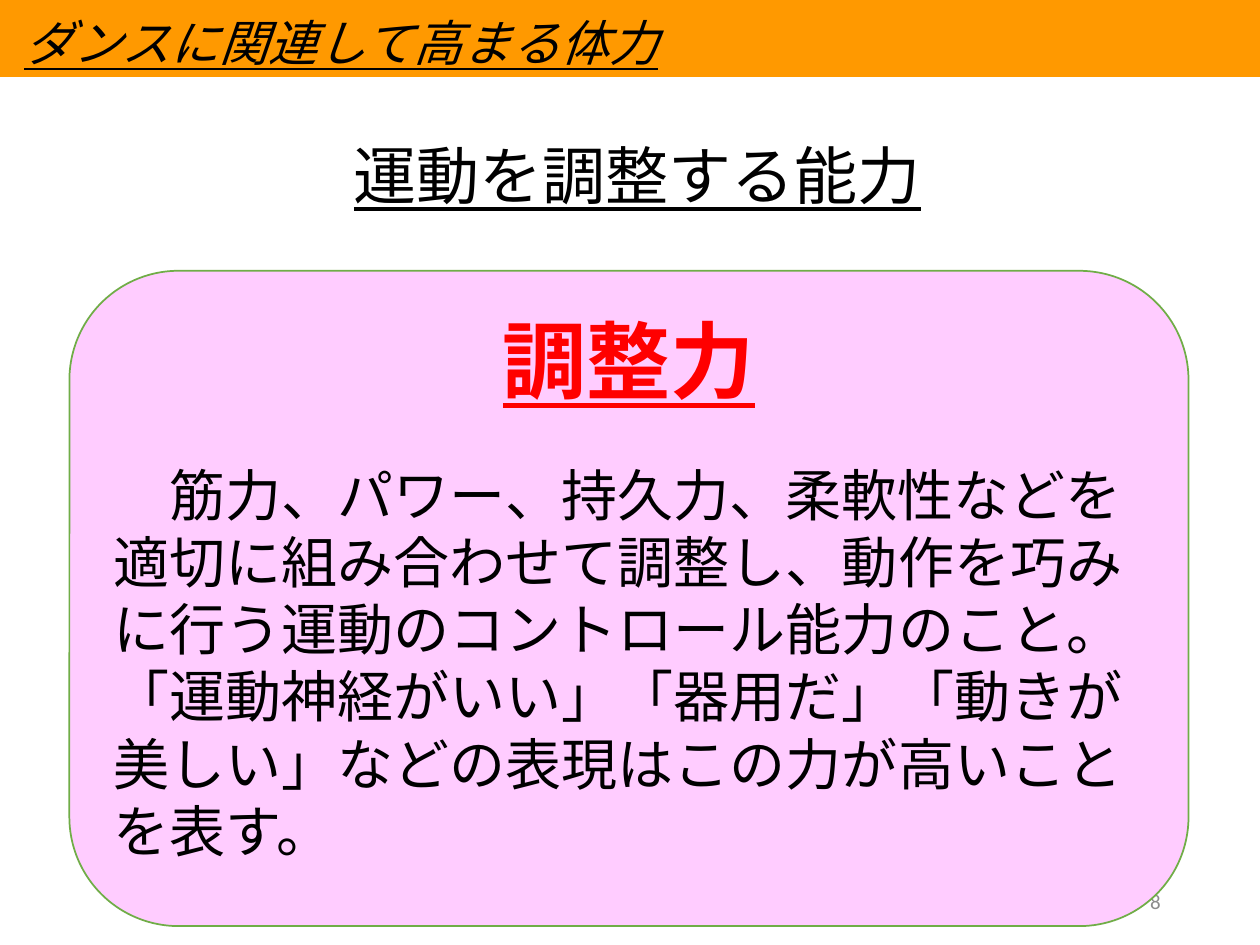
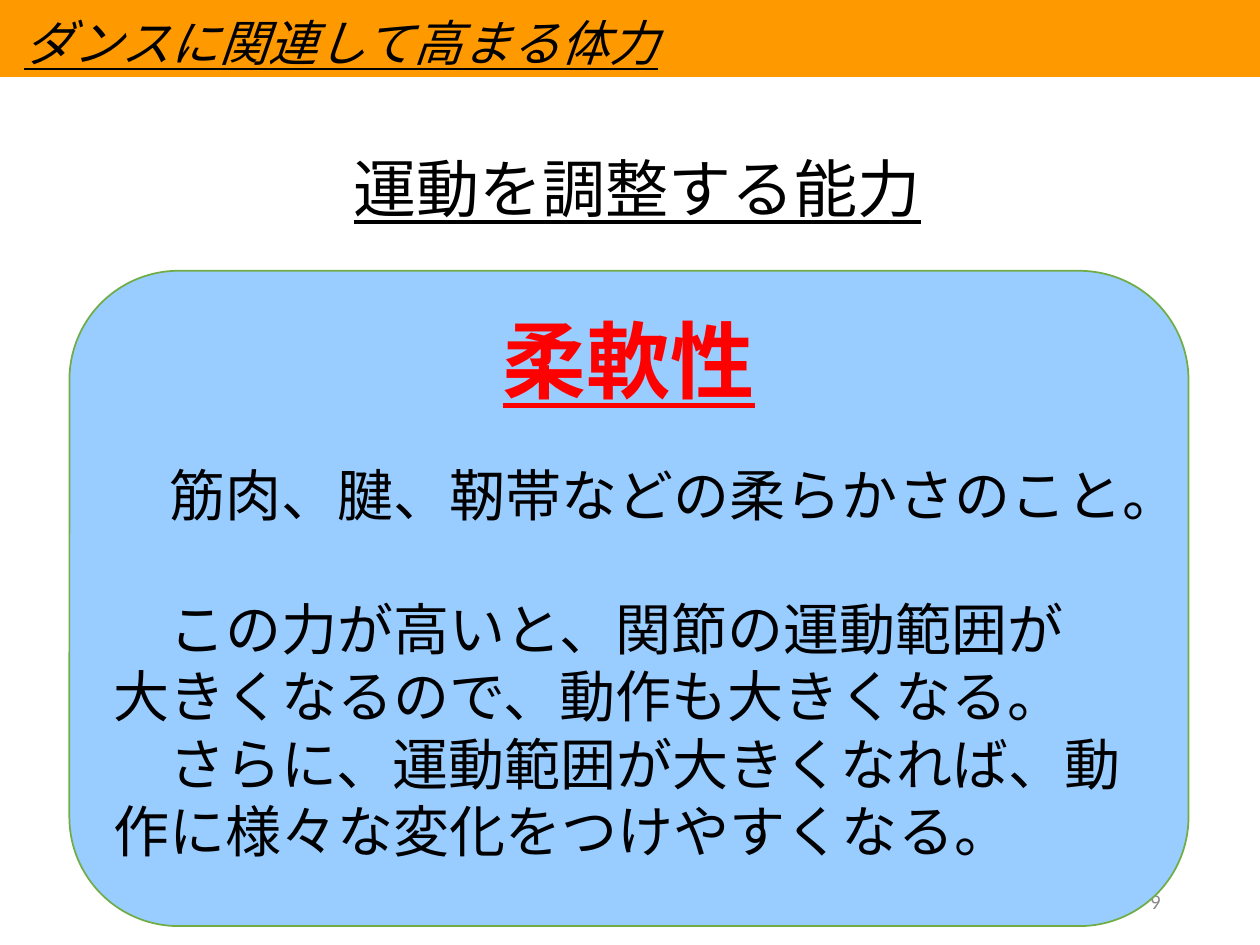
from pptx import Presentation
from pptx.dml.color import RGBColor
from pptx.enum.lang import MSO_LANGUAGE_ID as Lang
from pptx.enum.shapes import MSO_SHAPE as Kind
from pptx.enum.text import MSO_ANCHOR as Anchor, PP_ALIGN as Align
from pptx.util import Cm, Pt

THEME = {
    "band": "FF9900",
    "edge": "70AD47",
    "title": dict(name="Calibri", size=Pt(36), underline=True, color="000000"),
    "header": dict(name="Calibri", size=Pt(28), italic=True, underline=True, color="000000"),
    "term": dict(name="Calibri", size=Pt(48), bold=True, underline=True, color="FF0000"),
    "body": dict(name="Arial", size=Pt(32), color="000000"),
    "number": dict(name="Calibri", size=Pt(12), color="8C8C8C"),
}
HEADER = "ダンスに関連して高まる体力"
TITLE = "運動を調整する能力"
TERM_GAP, LINE_GAP = 28.8, 38.4  # points below the term, and one body line

# Each body line carries the space below it in points
PAGES = [
    dict(number=8, top=2.41, fill="FFCCFF", term="調整力", body=[
        ("　筋力、パワー、持久力、柔軟性などを適切に組み合わせて調整し、動作を巧みに行う"
         "運動のコントロール能力のこと。「運動神経がいい」「器用だ」「動きが美しい」"
         "などの表現はこの力が高いことを表す。", 0),
    ]),
    dict(number=9, top=2.67, fill="99CCFF", term="柔軟性", body=[
        ("　筋肉、腱、靭帯などの柔らかさのこと。", LINE_GAP),
        ("　この力が高いと、関節の運動範囲が", 0),
        ("大きくなるので、動作も大きくなる。", 0),
        ("　さらに、運動範囲が大きくなれば、動", 0),
        ("作に様々な変化をつけやすくなる。", 0),
    ]),
]


def write(par, text, style, align=Align.LEFT, after=0):
    """Fill a paragraph with one run in a theme style."""
    par.alignment, par.space_before, par.space_after = align, Pt(0), Pt(after)
    run = par.add_run()
    run.text = text
    run.font.language_id = Lang.JAPANESE
    for key, value in THEME[style].items():
        if key == "color":
            run.font.color.rgb = RGBColor.from_string(value)
        else:
            setattr(run.font, key, value)


def paint(shape, fill, edge=None):
    """Set a solid fill and an optional thin outline, with no shadow."""
    shape.shadow.inherit = False
    shape.fill.solid()
    shape.fill.fore_color.rgb = RGBColor.from_string(fill)
    if edge:
        shape.line.color.rgb = RGBColor.from_string(edge)
        shape.line.width = Pt(1)
    else:
        shape.line.fill.background()


deck = Presentation()
deck.slide_width, deck.slide_height = Cm(25.4), Cm(19.05)

for page in PAGES:
    slide = deck.slides.add_slide(deck.slide_layouts[5])
    shapes = slide.shapes

    title = shapes.title
    title.left, title.top = Cm(6.88), Cm(page["top"])
    title.width, title.height = Cm(12.58), Cm(2.21)
    title.text_frame.vertical_anchor = Anchor.MIDDLE
    write(title.text_frame.paragraphs[0], TITLE, "title")

    band = shapes.add_shape(Kind.RECTANGLE, Cm(-0.05), Cm(0), Cm(25.45), Cm(1.55))
    paint(band, THEME["band"])

    labels = [
        (str(page["number"]), "number", Align.RIGHT, (17.93, 17.65, 5.72, 1.02)),
        (HEADER, "header", Align.CENTER, (-0.18, 0.15, 14.12, 1.4)),
    ]
    for text, style, align, place in labels:
        frame = shapes.add_textbox(*map(Cm, place)).text_frame
        frame.word_wrap = True
        frame.vertical_anchor = Anchor.MIDDLE
        write(frame.paragraphs[0], text, style, align)

    card = shapes.add_shape(Kind.ROUNDED_RECTANGLE, Cm(1.4), Cm(5.46), Cm(22.56), Cm(13.21))
    paint(card, page["fill"], THEME["edge"])
    frame = card.text_frame
    frame.word_wrap = True
    frame.vertical_anchor = Anchor.TOP
    write(frame.paragraphs[0], page["term"], "term", Align.CENTER, TERM_GAP)
    for text, after in page["body"]:
        write(frame.add_paragraph(), text, "body", after=after)

deck.save("out.pptx")
